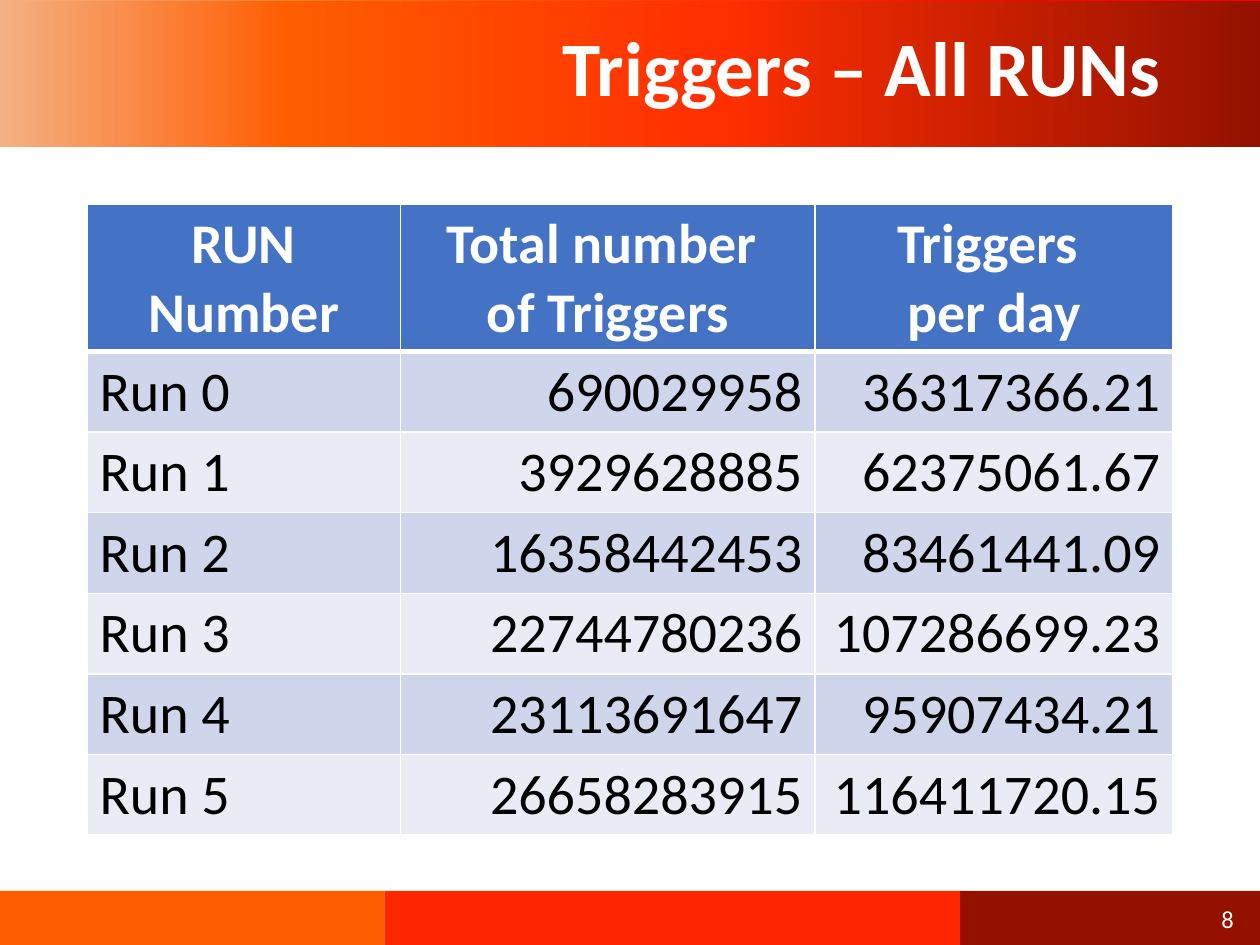
from lxml.etree import SubElement
from pptx import Presentation
from pptx.dml.color import RGBColor
from pptx.enum.shapes import MSO_SHAPE
from pptx.enum.text import MSO_ANCHOR, PP_ALIGN
from pptx.oxml.ns import qn
from pptx.util import Inches, Pt

FONT = "Calibri"
COLORS = {
    "white": "FFFFFF", "black": "000000", "peach": "F4B183",
    "orange": "FF5D00", "red": "FF0000", "scarlet": "FF2F00",
    "footer_red": "FF2600", "maroon": "941100",
    "header": "4472C4", "band_dark": "CFD5EA", "band_light": "E9EBF5",
}
COL_WIDTHS = [2.49, 3.29, 2.84]
HEADER_HEIGHT, ROW_HEIGHT = 1.17, 0.64
ROWS = [
    ["RUN Number", "Total number \nof Triggers", "Triggers \nper day"],
    ["Run 0", "690029958", "36317366.21"],
    ["Run 1", "3929628885", "62375061.67"],
    ["Run 2", "16358442453", "83461441.09"],
    ["Run 3", "22744780236", "107286699.23"],
    ["Run 4", "23113691647", "95907434.21"],
    ["Run 5", "26658283915", "116411720.15"],
]


def rgb(name):
    return RGBColor.from_string(COLORS[name])


def add_rect(s, x, y, w, h):
    sp = s.shapes.add_shape(MSO_SHAPE.RECTANGLE, Inches(x), Inches(y), Inches(w), Inches(h))
    sp.shadow.inherit = False
    sp.line.fill.background()
    return sp


def add_solid(s, x, y, w, h, color):
    sp = add_rect(s, x, y, w, h)
    sp.fill.solid()
    sp.fill.fore_color.rgb = rgb(color)


def add_gradient(s, x, y, w, h, stops, angle):
    sp = add_rect(s, x, y, w, h)
    sp.fill.gradient()
    sp.fill.gradient_angle = angle
    stop_list = next(sp.element.iter(qn("a:gsLst")))
    for old in list(stop_list):
        stop_list.remove(old)
    for percent, color in stops:
        gs = SubElement(stop_list, qn("a:gs"), pos=str(percent * 1000))
        SubElement(gs, qn("a:srgbClr"), val=COLORS[color])


def write(p, text, size, color, align, bold=False):
    p.alignment = align
    for i, line in enumerate(text.split("\n")):
        if i:
            p.add_line_break()
        r = p.add_run()
        r.text = line
        r.font.name, r.font.size, r.font.bold = FONT, Pt(size), bold
        r.font.color.rgb = rgb(color)


def add_label(s, x, y, w, h, text, size, bold=False):
    tf = s.shapes.add_textbox(Inches(x), Inches(y), Inches(w), Inches(h)).text_frame
    tf.word_wrap = True
    tf.vertical_anchor = MSO_ANCHOR.MIDDLE
    write(tf.paragraphs[0], text, size, "white", PP_ALIGN.RIGHT, bold)
    return tf


def set_borders(cell, bottom):
    tc_pr = cell._tc.get_or_add_tcPr()
    for i, (side, width) in enumerate([("L", 1), ("R", 1), ("T", 1), ("B", bottom)]):
        ln = tc_pr.makeelement(qn(f"a:ln{side}"), {"w": str(Pt(width))})
        fill = SubElement(ln, qn("a:solidFill"))
        SubElement(fill, qn("a:srgbClr"), val=COLORS["white"])
        tc_pr.insert(i, ln)


def add_trigger_table(s, x, y):
    height = HEADER_HEIGHT + ROW_HEIGHT * (len(ROWS) - 1)
    table = s.shapes.add_table(len(ROWS), len(COL_WIDTHS), Inches(x), Inches(y),
                               Inches(sum(COL_WIDTHS)), Inches(height)).table
    for col, width in zip(table.columns, COL_WIDTHS):
        col.width = Inches(width)
    for i, values in enumerate(ROWS):
        is_header = i == 0
        table.rows[i].height = Inches(HEADER_HEIGHT if is_header else ROW_HEIGHT)
        band = "header" if is_header else ("band_dark" if i % 2 else "band_light")
        for j, value in enumerate(values):
            cell = table.cell(i, j)
            cell.fill.solid()
            cell.fill.fore_color.rgb = rgb(band)
            set_borders(cell, 3 if is_header else 1)
            align = PP_ALIGN.RIGHT if j else PP_ALIGN.LEFT
            write(cell.text_frame.paragraphs[0], value, 32,
                  "white" if is_header else "black",
                  PP_ALIGN.CENTER if is_header else align, is_header)


def main():
    prs = Presentation()
    prs.slide_width, prs.slide_height = Inches(10), Inches(7.5)
    s = prs.slides.add_slide(prs.slide_layouts[6])

    # Header band
    add_gradient(s, 0, -0.01, 10, 1.16,
                 [(0, "peach"), (35, "orange"), (74, "red")], 315)
    add_gradient(s, 0, 0.01, 10, 1.16,
                 [(0, "peach"), (23, "orange"), (57, "scarlet"), (100, "maroon")], 0)

    # Footer blocks
    add_solid(s, 7.62, 7.07, 2.38, 0.45, "maroon")
    add_solid(s, 3.05, 7.07, 4.57, 0.44, "footer_red")
    add_solid(s, 0, 7.07, 3.05, 0.45, "orange")

    # Title, table and page number
    title = add_label(s, 0.69, 0.01, 8.62, 1.11, "Triggers – All RUNs", 44, bold=True)
    title.paragraphs[0].line_spacing = 0.9
    add_trigger_table(s, 0.69, 1.62)
    add_label(s, 7.64, 7.09, 2.25, 0.4, "8", 14)

    prs.save("out.pptx")


if __name__ == "__main__":
    main()
